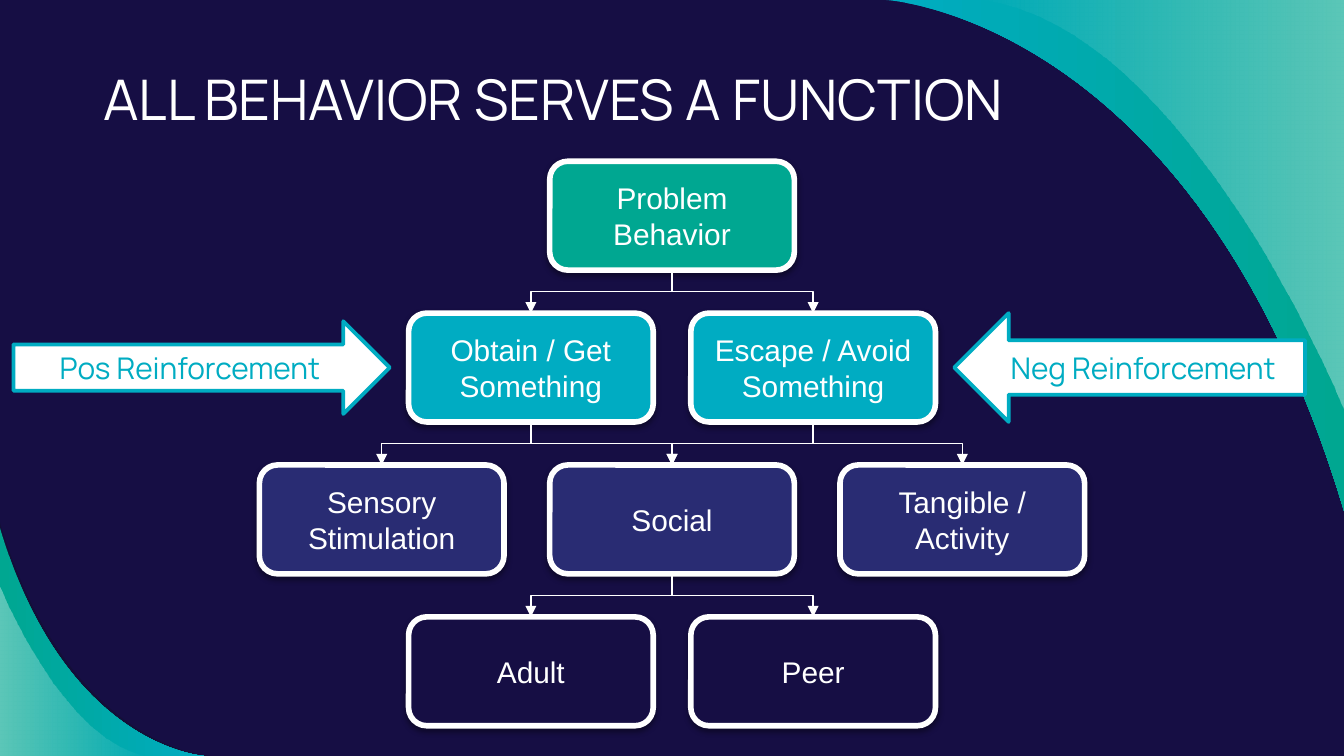
"""Build a slide with a tree of the functions that behavior serves."""
from typing import NamedTuple, Optional

from lxml import etree
from pptx import Presentation
from pptx.dml.color import RGBColor
from pptx.enum.shapes import MSO_CONNECTOR, MSO_SHAPE
from pptx.enum.text import MSO_ANCHOR, PP_ALIGN
from pptx.oxml.ns import qn
from pptx.util import Inches, Pt

ELBOW = MSO_CONNECTOR.ELBOW
ROUNDED = MSO_SHAPE.ROUNDED_RECTANGLE
RIGHT_ARROW, LEFT_ARROW = MSO_SHAPE.RIGHT_ARROW, MSO_SHAPE.LEFT_ARROW
TOP, MIDDLE = MSO_ANCHOR.TOP, MSO_ANCHOR.MIDDLE
LEFT, CENTER = PP_ALIGN.LEFT, PP_ALIGN.CENTER

NAVY = RGBColor(0x16, 0x0E, 0x44)
SHADE = RGBColor(0x12, 0x10, 0x2F)
INDIGO = RGBColor(0x29, 0x2C, 0x73)
CYAN = RGBColor(0x00, 0xAC, 0xC2)
GREEN = RGBColor(0x00, 0xA7, 0x91)
WHITE = RGBColor(0xFF, 0xFF, 0xFF)

WIDTH, HEIGHT = 10, 5.625
COLUMNS = [share * WIDTH for share in (0.284, 0.395, 0.5, 0.605, 0.716)]
FIRST_ROW, ROW_STEP = 1.2, 1.13
BOX_WIDTH, BOX_HEIGHT = 1.82, 0.81


class Stop(NamedTuple):
    """A gradient colour with its opacity in percent."""
    color: RGBColor
    opacity: int = 100


class Swoosh(NamedTuple):
    """A corner area bounded by one Bezier curve, filled from left to right."""
    curve: tuple
    corner: tuple
    stops: tuple


class Node(NamedTuple):
    """A box of the tree at a grid column and row."""
    text: str
    column: int
    row: int
    fill: RGBColor


class Arrow(NamedTuple):
    """A labelled block arrow beside the tree."""
    text: str
    preset: MSO_SHAPE
    left: float
    top: float
    width: float
    height: float


BLUE_STOP, GREEN_STOP = Stop(CYAN), Stop(GREEN)
CLEAR_STOP, HAZE_STOP = Stop(WHITE, 0), Stop(WHITE, 36)
LOWER, UPPER = (0, HEIGHT), (WIDTH, 0)

SWOOSHES = [
    Swoosh(((0, 3.89), (0.51, 5.57), (1.56, HEIGHT), (1.56, HEIGHT)), LOWER,
           (Stop(SHADE, 54),)),
    Swoosh(((1.52, HEIGHT), (1.52, HEIGHT), (0.49, 5.57), (0, 3.93)), LOWER,
           (GREEN_STOP, BLUE_STOP)),
    Swoosh(((0, 4.37), (0, 4.37), (0.47, 5.55), (1.11, HEIGHT)), LOWER,
           (HAZE_STOP, CLEAR_STOP)),
    Swoosh(((6.59, 0), (6.59, 0), (8.9, 0.12), (10, 3.8)), UPPER,
           (BLUE_STOP, GREEN_STOP)),
    Swoosh(((10, 3.06), (10, 3.06), (8.85, 0.19), (7.29, 0)), UPPER,
           (CLEAR_STOP, HAZE_STOP)),
]

ARROWS = [
    Arrow("Pos Reinforcement", RIGHT_ARROW, 0.1, 2.39, 2.8, 0.69),
    Arrow("Neg Reinforcement", LEFT_ARROW, 7.1, 2.33, 2.61, 0.81),
]

PROBLEM = Node("Problem Behavior", 2, 0, GREEN)
OBTAIN = Node("Obtain / Get Something", 1, 1, CYAN)
ESCAPE = Node("Escape / Avoid Something", 3, 1, CYAN)
SOCIAL = Node("Social", 2, 2, INDIGO)
SENSORY = Node("Sensory Stimulation", 0, 2, INDIGO)
TANGIBLE = Node("Tangible / Activity", 4, 2, INDIGO)
ADULT = Node("Adult", 1, 3, NAVY)
PEER = Node("Peer", 3, 3, NAVY)
NODES = [PROBLEM, OBTAIN, ESCAPE, SOCIAL, SENSORY, TANGIBLE, ADULT, PEER]
LINKS = [(PROBLEM, ESCAPE), (PROBLEM, OBTAIN), (OBTAIN, SENSORY),
         (ESCAPE, TANGIBLE), (OBTAIN, SOCIAL), (ESCAPE, SOCIAL),
         (SOCIAL, ADULT), (SOCIAL, PEER)]


def write_text(shape, text: str, *, size: int = 16, font: str = "Arial",
               color: RGBColor = WHITE, align: PP_ALIGN = CENTER,
               anchor: MSO_ANCHOR = MIDDLE, wrap: bool = True,
               inset: Optional[float] = None) -> None:
    """Write one formatted paragraph into a shape."""
    frame = shape.text_frame
    frame.word_wrap, frame.vertical_anchor = wrap, anchor
    if inset is not None:
        frame.margin_left = frame.margin_right = Inches(inset)
        frame.margin_top = frame.margin_bottom = Inches(inset)
    para = frame.paragraphs[0]
    para.alignment = align
    span = para.add_run()
    span.text = text
    span.font.size, span.font.name = Pt(size), font
    span.font.color.rgb = color


def draw_swoosh(slide, swoosh: Swoosh) -> None:
    """Draw a corner area with one curved edge."""
    start, *others = [(Inches(x), Inches(y)) for x, y in (*swoosh.curve, swoosh.corner)]
    builder = slide.shapes.build_freeform(*start)
    builder.add_line_segments(others, close=True)
    shape = builder.convert_to_shape()
    shape.shadow.inherit = False
    shape.line.fill.background()
    properties = shape.element.spPr
    segments = list(properties.iter(qn("a:lnTo")))[:3]
    curve = etree.Element(qn("a:cubicBezTo"))
    segments[0].addprevious(curve)
    for segment in segments:
        curve.append(segment[0])
        segment.getparent().remove(segment)
    if len(swoosh.stops) == 1:
        shape.fill.solid()
        shape.fill.fore_color.rgb = swoosh.stops[0].color
    else:
        shape.fill.gradient()
        shape.fill.gradient_angle = 0
        for target, stop in zip(shape.fill.gradient_stops, swoosh.stops):
            target.color.rgb = stop.color
    for color, stop in zip(properties.iter(qn("a:srgbClr")), swoosh.stops):
        etree.SubElement(color, qn("a:alpha"), val=str(stop.opacity * 1000))


def draw_block(slide, preset: MSO_SHAPE, bounds: tuple, fill: RGBColor,
               line: RGBColor, weight: float):
    """Draw a filled and outlined preset shape without a shadow."""
    shape = slide.shapes.add_shape(preset, *(Inches(value) for value in bounds))
    shape.shadow.inherit = False
    shape.fill.solid()
    shape.fill.fore_color.rgb = fill
    shape.line.color.rgb = line
    shape.line.width = Pt(weight)
    return shape


def row_top(row: int) -> float:
    """Return the top of a row of the tree."""
    return FIRST_ROW + row * ROW_STEP


def draw_node(slide, node: Node) -> None:
    """Draw a tree box with a soft shadow below it."""
    bounds = (COLUMNS[node.column] - BOX_WIDTH / 2, row_top(node.row), BOX_WIDTH, BOX_HEIGHT)
    box = draw_block(slide, ROUNDED, bounds, node.fill, WHITE, 3)
    effects = box.element.spPr.find(qn("a:effectLst"))
    shadow = etree.SubElement(effects, qn("a:outerShdw"), blurRad="40000",
                              dist="20000", dir="5400000", rotWithShape="0")
    color = etree.SubElement(shadow, qn("a:srgbClr"), val="000000")
    etree.SubElement(color, qn("a:alpha"), val="38000")
    write_text(box, node.text)


def draw_link(slide, parent: Node, child: Node) -> None:
    """Draw an elbow arrow down from a parent to a child, as a turned connector."""
    start, end = COLUMNS[parent.column], COLUMNS[child.column]
    top, bottom = row_top(parent.row) + BOX_HEIGHT, row_top(child.row)
    middle_x, middle_y = (start + end) / 2, (top + bottom) / 2
    rightward = end > start
    reach = (bottom - top) / 2 * (-1 if rightward else 1)
    rise = abs(end - start) / 2
    corners = (middle_x - reach, middle_y - rise, middle_x + reach, middle_y + rise)
    link = slide.shapes.add_connector(ELBOW, *(Inches(value) for value in corners))
    link.line.color.rgb = WHITE
    link.line.width = Pt(0.75)
    properties = link.element.spPr
    properties.find(qn("a:xfrm")).set("rot", str((270 if rightward else 90) * 60000))
    etree.SubElement(properties.find(qn("a:ln")), qn("a:tailEnd"), type="triangle")
    etree.SubElement(properties, qn("a:effectLst"))


def main() -> None:
    """Build and save the deck."""
    deck = Presentation()
    deck.slide_width, deck.slide_height = Inches(WIDTH), Inches(HEIGHT)
    page = deck.slides.add_slide(deck.slide_layouts[6])
    page.background.fill.solid()
    page.background.fill.fore_color.rgb = NAVY
    for swoosh in SWOOSHES:
        draw_swoosh(page, swoosh)
    for arrow in ARROWS:
        block = draw_block(page, arrow.preset, arrow[2:], WHITE, CYAN, 2)
        write_text(block, arrow.text, font="Manrope", color=CYAN, wrap=False)
    title = page.shapes.add_textbox(Inches(0.67), Inches(0.38), Inches(7.69), Inches(0.69))
    write_text(title, "ALL BEHAVIOR SERVES A FUNCTION", size=30, font="Manrope",
               align=LEFT, anchor=TOP, inset=0.1)
    for node in NODES:
        draw_node(page, node)
    for parent, child in LINKS:
        draw_link(page, parent, child)
    deck.save("out.pptx")


if __name__ == "__main__":
    main()
